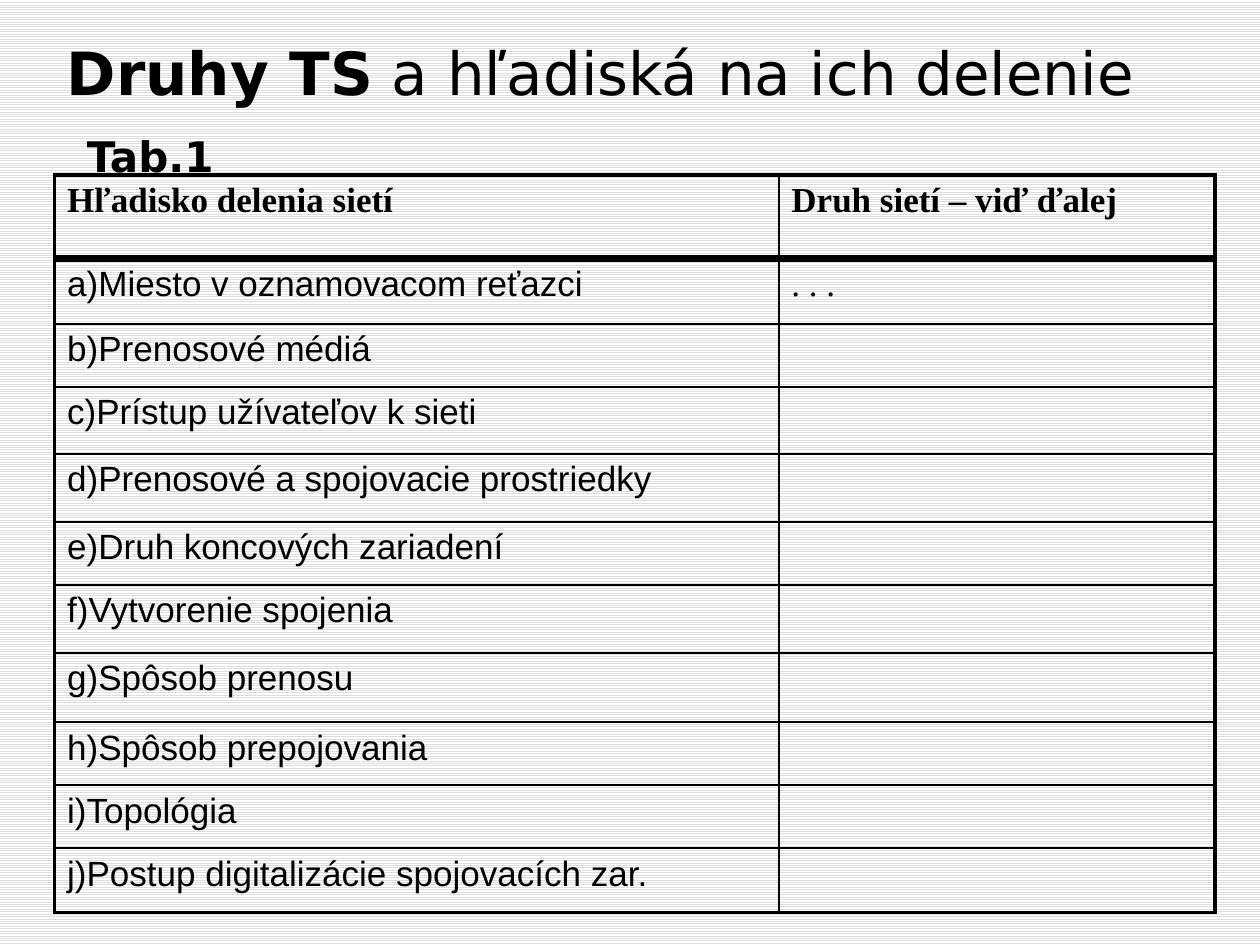
import pptx
import pptx.dml.color
import pptx.enum.dml
import pptx.enum.text
import pptx.oxml
import pptx.oxml.ns
import pptx.util
from pptx.util import Cm

BLACK = pptx.dml.color.RGBColor(0x00, 0x00, 0x00)
GREY = pptx.dml.color.RGBColor(0xDD, 0xDD, 0xDD)
WHITE = pptx.dml.color.RGBColor(0xFF, 0xFF, 0xFF)

HEADER = ("Hľadisko delenia sietí", "Druh sietí – viď ďalej")
CRITERIA = (
    "a)Miesto v oznamovacom reťazci",
    "b)Prenosové médiá",
    "c)Prístup užívateľov k sieti",
    "d)Prenosové a spojovacie prostriedky",
    "e)Druh koncových zariadení",
    "f)Vytvorenie spojenia",
    "g)Spôsob prenosu",
    "h)Spôsob prepojovania",
    "i)Topológia",
    "j)Postup digitalizácie spojovacích zar.",
)
COL_WIDTHS = (14.6, 8.79)
ROW_HEIGHTS = (1.68, 1.32, 1.27, 1.35, 1.37, 1.27, 1.37, 1.4, 1.27, 1.27, 1.3)
THIN, OUTER, HEAVY = 1, 2.25, 5


class Deck:
    heading_font = "DejaVu Sans"
    header_font = "Times New Roman"
    body_font = "Arial"
    table_size = 20

    def __init__(self, prs):
        self.s = prs.slides.add_slide(prs.slide_layouts[6])

    def background(self):
        fill = self.s.background.fill
        fill.patterned()
        fill.pattern = pptx.enum.dml.MSO_PATTERN.LIGHT_HORIZONTAL
        fill.fore_color.rgb = GREY
        fill.back_color.rgb = WHITE

    def style(self, r, font, size, bold=False):
        r.font.name = font
        r.font.size = pptx.util.Pt(size)
        r.font.bold = bold
        r.font.color.rgb = BLACK

    def text(self, left, top, width, height, runs, size, anchor):
        """Add a one-line text box; runs are (text, bold) pairs."""
        sp = self.s.shapes.add_textbox(Cm(left), Cm(top), Cm(width), Cm(height))
        tf = sp.text_frame
        tf.word_wrap = True
        tf.vertical_anchor = anchor
        for text, bold in runs:
            r = tf.paragraphs[0].add_run()
            r.text = text
            self.style(r, self.heading_font, size, bold)

    def border(self, cell, widths):
        """Set the left, right, top and bottom lines, widths in points."""
        tcPr = cell._tc.get_or_add_tcPr()
        for i, (side, width) in enumerate(zip("LRTB", widths)):
            tcPr.insert(i, pptx.oxml.parse_xml(
                f'<a:ln{side} {pptx.oxml.ns.nsdecls("a")} w="{pptx.util.Pt(width)}">'
                f'<a:solidFill><a:srgbClr val="{BLACK}"/></a:solidFill></a:ln{side}>'))

    def table(self, left, top, rows, col_widths, row_heights):
        last_row, last_col = len(rows) - 1, len(col_widths) - 1
        table = self.s.shapes.add_table(
            len(rows), len(col_widths), Cm(left), Cm(top),
            Cm(sum(col_widths)), Cm(sum(row_heights))).table
        table.horz_banding = False
        for column, width in zip(table.columns, col_widths):
            column.width = Cm(width)
        for i, (row, height) in enumerate(zip(rows, row_heights)):
            table.rows[i].height = Cm(height)
            above = {0: OUTER, 1: HEAVY}.get(i, THIN)
            below = {0: HEAVY, last_row: OUTER}.get(i, THIN)
            for j, text in enumerate(row):
                cell = table.cell(i, j)
                cell.fill.background()
                self.border(cell, (OUTER if j == 0 else THIN,
                                   OUTER if j == last_col else THIN,
                                   above, below))
                if text:
                    cell.text_frame.text = text
                    font = self.header_font if i == 0 or j > 0 else self.body_font
                    self.style(cell.text_frame.paragraphs[0].runs[0],
                               font, self.table_size, bold=i == 0)


def main():
    prs = pptx.Presentation()
    prs.slide_width, prs.slide_height = Cm(25.4), Cm(19.05)
    deck = Deck(prs)
    deck.background()
    anchors = pptx.enum.text.MSO_ANCHOR
    deck.text(1.1, 0.7, 22.23, 1.6,
              [("Druhy TS", True), (" a hľadiská na ich delenie", False)],
              34, anchors.BOTTOM)
    deck.text(1.5, 2.5, 7.8, 1.27, [("Tab.1", True)], 24, anchors.TOP)
    rows = [HEADER] + [(text, "" if i else ". . .")
                       for i, text in enumerate(CRITERIA)]
    deck.table(1.1, 3.53, rows, COL_WIDTHS, ROW_HEIGHTS)
    prs.save("out.pptx")


if __name__ == "__main__":
    main()
